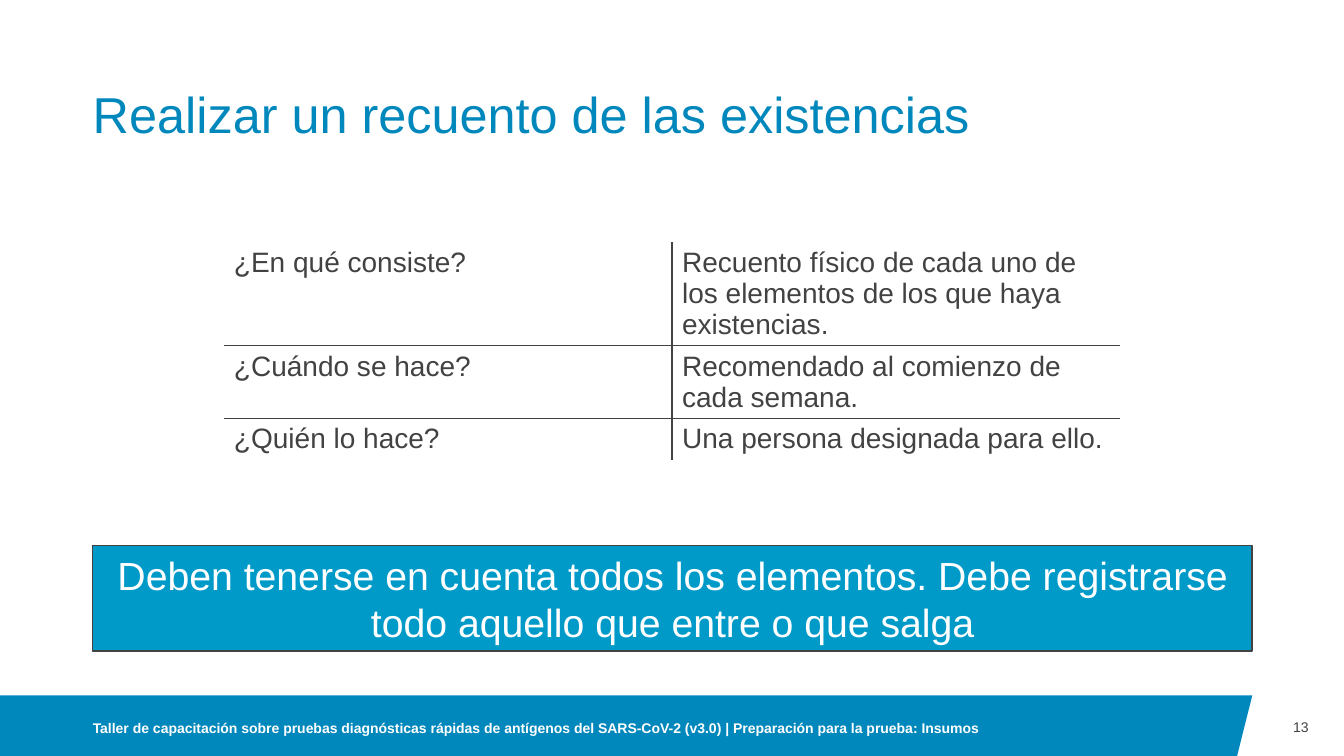
from dataclasses import dataclass

import pptx
import pptx.dml.color
import pptx.enum.shapes
import pptx.enum.text
import pptx.oxml
import pptx.oxml.ns
import pptx.util

Inches = pptx.util.Inches
Pt = pptx.util.Pt
ALIGN = pptx.enum.text.PP_ALIGN
ANCHOR = pptx.enum.text.MSO_ANCHOR

BLUE, BRIGHT, GREY, WHITE = "0087BC", "009AC9", "424242", "FFFFFF"
WIDTH, HEIGHT = 13.33, 7.5
LEFT, BODY_WIDTH = 0.92, 11.5
BAND_TOP, BAND_RIGHT = 6.9, 12.42
NO_TABLE_STYLE = "{2D5ABB26-0587-4C30-8999-92F81FD0307C}"


@dataclass
class Label:
    text: str
    left: float
    top: float
    width: float
    height: float
    size: float
    color: str
    bold: bool = False
    align: ALIGN = ALIGN.LEFT
    anchor: ANCHOR = ANCHOR.MIDDLE
    spacing: float = 1.0


@dataclass
class Row:
    question: str
    answer: str
    height: float


LABELS = [
    Label("Realizar un recuento de las existencias", LEFT, 0.4, BODY_WIDTH, 1.03,
          36, BLUE, anchor=ANCHOR.BOTTOM, spacing=0.9),
    Label("13", BAND_RIGHT, BAND_TOP, 0.56, 0.63, 10, GREY, align=ALIGN.RIGHT),
    Label("Taller de capacitación sobre pruebas diagnósticas rápidas de antígenos del "
          "SARS-CoV-2 (v3.0) | Preparación para la prueba: Insumos",
          LEFT, 6.95, 9.02, 0.55, 10, WHITE, bold=True),
]
ROWS = [
    Row("¿En qué consiste?",
        "Recuento físico de cada uno de los elementos de los que haya existencias.", 1.03),
    Row("¿Cuándo se hace?", "Recomendado al comienzo de cada semana.", 0.72),
    Row("¿Quién lo hace?", "Una persona designada para ello.", 0.41),
]


def rgb(color: str) -> pptx.dml.color.RGBColor:
    return pptx.dml.color.RGBColor.from_string(color)


def set_text(tf, text: str, size: float, color: str, bold: bool = False,
             align: ALIGN = ALIGN.LEFT) -> None:
    tf.text = text
    tf.word_wrap = True
    p = tf.paragraphs[0]
    p.alignment = align
    font = p.runs[0].font
    font.name, font.size, font.bold = "Arial", Pt(size), bold
    font.color.rgb = rgb(color)


def set_insets(tf, inset: float) -> None:
    tf.margin_left = tf.margin_right = Inches(inset)
    tf.margin_top = tf.margin_bottom = Inches(inset)


def add_label(slide, label: Label) -> None:
    sp = slide.shapes.add_textbox(Inches(label.left), Inches(label.top),
                                  Inches(label.width), Inches(label.height))
    tf = sp.text_frame
    set_text(tf, label.text, label.size, label.color, label.bold, label.align)
    set_insets(tf, 0)
    tf.vertical_anchor = label.anchor
    tf.paragraphs[0].line_spacing = label.spacing


def add_footer_band(slide) -> None:
    builder = slide.shapes.build_freeform(0, Inches(BAND_TOP))
    corners = [(BAND_RIGHT, BAND_TOP), (12.27, HEIGHT), (0, HEIGHT)]
    builder.add_line_segments([(Inches(x), Inches(y)) for x, y in corners])
    sp = builder.convert_to_shape()
    sp.shadow.inherit = False
    sp.fill.solid()
    sp.fill.fore_color.rgb = rgb(BLUE)
    sp.line.fill.background()


def add_border(cell, side: str, visible: bool) -> None:
    fill = (f'<a:solidFill><a:srgbClr val="{GREY}"/></a:solidFill>' if visible
            else "<a:noFill/>")
    cell._tc.get_or_add_tcPr().append(pptx.oxml.parse_xml(
        f'<a:ln{side} {pptx.oxml.ns.nsdecls("a")} w="{Pt(1)}">{fill}</a:ln{side}>'))


def add_questions(slide, rows: list[Row]) -> None:
    """Draw the table with inner borders only."""
    frame = slide.shapes.add_table(len(rows), 2, Inches(2.22), Inches(2.4), Inches(8.89),
                                   Inches(sum(row.height for row in rows)))
    table = frame.table
    table.first_row = table.horz_banding = False
    table._tbl.tblPr.find(pptx.oxml.ns.qn("a:tableStyleId")).text = NO_TABLE_STYLE
    for i, row in enumerate(rows):
        table.rows[i].height = Inches(row.height)
        for j, text in enumerate((row.question, row.answer)):
            cell = table.cell(i, j)
            set_text(cell.text_frame, text, 20, GREY)
            inner = {"L": j > 0, "R": j == 0, "T": i > 0, "B": i < len(rows) - 1}
            for side, visible in inner.items():
                add_border(cell, side, visible)
            cell.fill.background()


def add_callout(slide, text: str) -> None:
    sp = slide.shapes.add_shape(pptx.enum.shapes.MSO_SHAPE.RECTANGLE, Inches(LEFT),
                                Inches(5.41), Inches(BODY_WIDTH), Inches(1.05))
    sp.shadow.inherit = False
    sp.fill.solid()
    sp.fill.fore_color.rgb = rgb(BRIGHT)
    sp.line.color.rgb = rgb(GREY)
    sp.line.width = Pt(1)
    set_text(sp.text_frame, text, 28, WHITE, align=ALIGN.CENTER)
    set_insets(sp.text_frame, 0.06)
    sp.text_frame.vertical_anchor = ANCHOR.MIDDLE


def main() -> None:
    prs = pptx.Presentation()
    prs.slide_width, prs.slide_height = Inches(WIDTH), Inches(HEIGHT)
    slide = prs.slides.add_slide(prs.slide_layouts[6])
    add_footer_band(slide)
    add_questions(slide, ROWS)
    add_callout(slide, "Deben tenerse en cuenta todos los elementos. "
                       "Debe registrarse todo aquello que entre o que salga")
    for label in LABELS:
        add_label(slide, label)
    prs.save("out.pptx")


if __name__ == "__main__":
    main()
